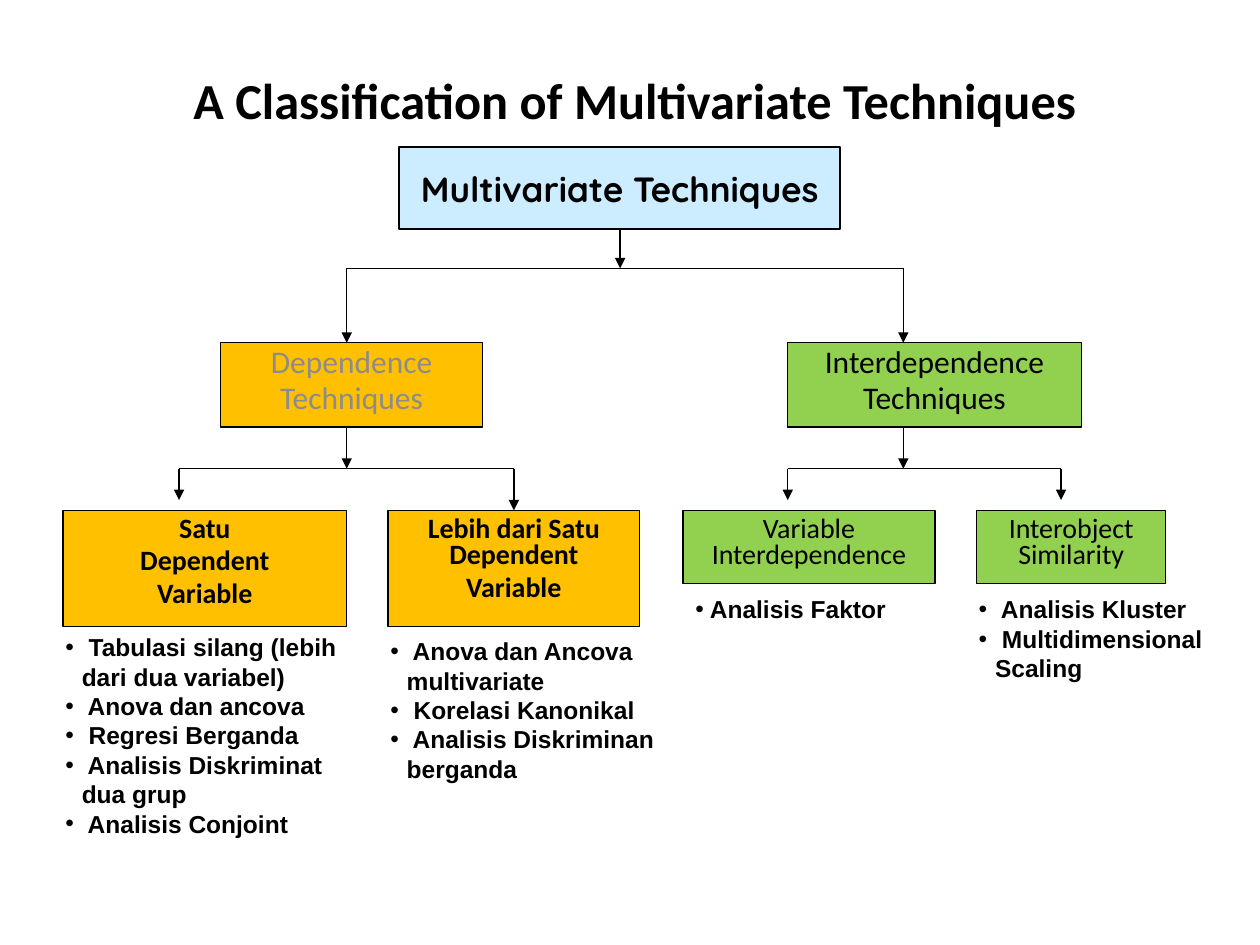
"""Build a slide with a tree that classifies multivariate techniques."""
import dataclasses

import lxml.etree
import pptx
import pptx.dml.color
import pptx.enum.shapes
import pptx.enum.text
import pptx.oxml.ns
import pptx.util
from pptx.util import Cm


@dataclasses.dataclass(frozen=True)
class Theme:
    ink: str = "000000"
    muted: str = "8C8C8C"
    root: str = "CCECFF"
    dependence: str = "FFC000"
    interdependence: str = "92D050"
    heading_font: str = "Calibri"
    list_font: str = "Arial"
    root_font: str = "Quicksand"
    title_size: float = 28.8
    root_size: float = 20
    branch_size: float = 18
    leaf_size: float = 16
    list_size: float = 14
    line_width: float = 0.75
    root_line_width: float = 1


THEME = Theme()
CENTER = pptx.enum.text.PP_ALIGN.CENTER
LEFT = pptx.enum.text.PP_ALIGN.LEFT
MIDDLE = pptx.enum.text.MSO_ANCHOR.MIDDLE
TOP = pptx.enum.text.MSO_ANCHOR.TOP


def rgb(code):
    return pptx.dml.color.RGBColor.from_string(code)


def add_element(parent, tag, **attributes):
    element = lxml.etree.SubElement(parent, pptx.oxml.ns.qn(tag))
    for name, value in attributes.items():
        element.set(name, value)


def write(frame, lines, font, size, color=THEME.ink, bold=False, align=CENTER, anchor=TOP):
    frame.word_wrap = True
    frame.vertical_anchor = anchor
    for index, line in enumerate(lines):
        para = frame.paragraphs[0] if index == 0 else frame.add_paragraph()
        para.alignment = align
        span = para.add_run()
        span.text = line
        span.font.name = font
        span.font.size = pptx.util.Pt(size)
        span.font.bold = bold
        span.font.color.rgb = rgb(color)


def add_title(page, text):
    box = page.shapes.add_textbox(Cm(0.84), Cm(1.27), Cm(23.93), Cm(1.47))
    write(box.text_frame, [text], THEME.heading_font, THEME.title_size, bold=True, anchor=MIDDLE)


def add_box(page, place, fill, line_width=THEME.line_width):
    rectangle = pptx.enum.shapes.MSO_SHAPE.RECTANGLE
    box = page.shapes.add_shape(rectangle, *map(Cm, place))
    box.shadow.inherit = False
    box.fill.solid()
    box.fill.fore_color.rgb = rgb(fill)
    box.line.color.rgb = rgb(THEME.ink)
    box.line.width = pptx.util.Pt(line_width)
    return box


def add_root(page, text):
    box = add_box(page, (8.05, 2.97, 8.89, 1.65), THEME.root, THEME.root_line_width)
    write(box.text_frame, [text], THEME.root_font, THEME.root_size, bold=True, anchor=MIDDLE)
    box.text_frame.word_wrap = False


def add_node(page, place, fill, lines, size, color=THEME.ink, bold=False):
    box = add_box(page, place, fill)
    write(box.text_frame, lines, THEME.heading_font, size, color, bold)
    for para in box.text_frame.paragraphs:
        para.line_spacing = 0.8
        para.space_after = pptx.util.Pt(0.2 * size)


def add_list(page, place, items, hanging=0.33):
    box = page.shapes.add_textbox(*map(Cm, place))
    write(box.text_frame, items, THEME.list_font, THEME.list_size, bold=True, align=LEFT)
    for para in box.text_frame.paragraphs:
        properties = para._p.get_or_add_pPr()
        properties.set("marL", str(Cm(hanging)))
        properties.set("indent", str(-Cm(hanging)))
        add_element(properties, "a:buFont", typeface=THEME.list_font)
        add_element(properties, "a:buChar", char="•")


def add_line(page, start, end, arrow=False):
    straight = pptx.enum.shapes.MSO_CONNECTOR.STRAIGHT
    line = page.shapes.add_connector(straight, *map(Cm, (*start, *end)))
    line.line.color.rgb = rgb(THEME.ink)
    line.line.width = pptx.util.Pt(THEME.line_width)
    if arrow:
        add_element(line.line._get_or_add_ln(), "a:tailEnd", type="triangle")
    add_element(line._element.spPr, "a:effectLst")


def add_fork(page, stem, bar_y, tips):
    add_line(page, stem, (stem[0], bar_y), arrow=True)
    add_line(page, (tips[0][0], bar_y), (tips[-1][0], bar_y))
    for x, y in tips:
        add_line(page, (x, bar_y), (x, y), arrow=True)


def main():
    deck = pptx.Presentation()
    deck.slide_width, deck.slide_height = Cm(25.4), Cm(19.05)
    page = deck.slides.add_slide(deck.slide_layouts[6])
    add_title(page, "A Classification of Multivariate Techniques")

    branch_top, branch_height, leaf_top = 6.91, 1.7, 10.29
    branches = [
        (4.45, 5.28, THEME.dependence, "Dependence", THEME.muted),
        (15.88, 5.92, THEME.interdependence, "Interdependence", THEME.ink),
    ]
    for left, width, fill, name, color in branches:
        place = (left, branch_top, width, branch_height)
        add_node(page, place, fill, [name, "Techniques"], THEME.branch_size, color)

    leaves = [
        (1.27, 5.72, 2.34, THEME.dependence, ["Satu", "Dependent", "Variable"], True),
        (7.82, 5.08, 2.34, THEME.dependence, ["Lebih dari Satu Dependent", "Variable"], True),
        (13.77, 5.08, 1.47, THEME.interdependence, ["Variable Interdependence"], False),
        (19.69, 3.81, 1.47, THEME.interdependence, ["Interobject Similarity"], False),
    ]
    for left, width, height, fill, lines, bold in leaves:
        place = (left, leaf_top, width, height)
        add_node(page, place, fill, lines, THEME.leaf_size, bold=bold)

    add_list(page, (1.07, 12.62, 6.35, 5.05), [
        " Tabulasi silang (lebih dari dua variabel)",
        " Anova dan ancova",
        " Regresi Berganda",
        " Analisis Diskriminat dua grup",
        " Analisis Conjoint",
    ])
    add_list(page, (7.62, 12.7, 5.92, 3.25), [
        " Anova dan Ancova multivariate",
        " Korelasi Kanonikal",
        " Analisis Diskriminan berganda",
    ])
    add_list(page, (13.77, 11.86, 4.88, 0.86), [" Analisis Faktor"], hanging=0)
    add_list(page, (19.48, 11.86, 5.72, 2.06), [
        " Analisis Kluster",
        " Multidimensional Scaling",
    ])

    left_x, right_x, tip_y = 6.99, 18.21, 10.08
    branch_bottom = branch_top + branch_height
    add_fork(page, (12.5, 4.57), 5.41, [(left_x, branch_top), (right_x, branch_top)])
    add_fork(page, (left_x, branch_bottom), 9.45, [(3.61, tip_y), (10.36, leaf_top)])
    add_fork(page, (right_x, branch_bottom), 9.45, [(15.88, tip_y), (21.39, tip_y)])
    add_root(page, "Multivariate Techniques")
    deck.save("out.pptx")


if __name__ == "__main__":
    main()
